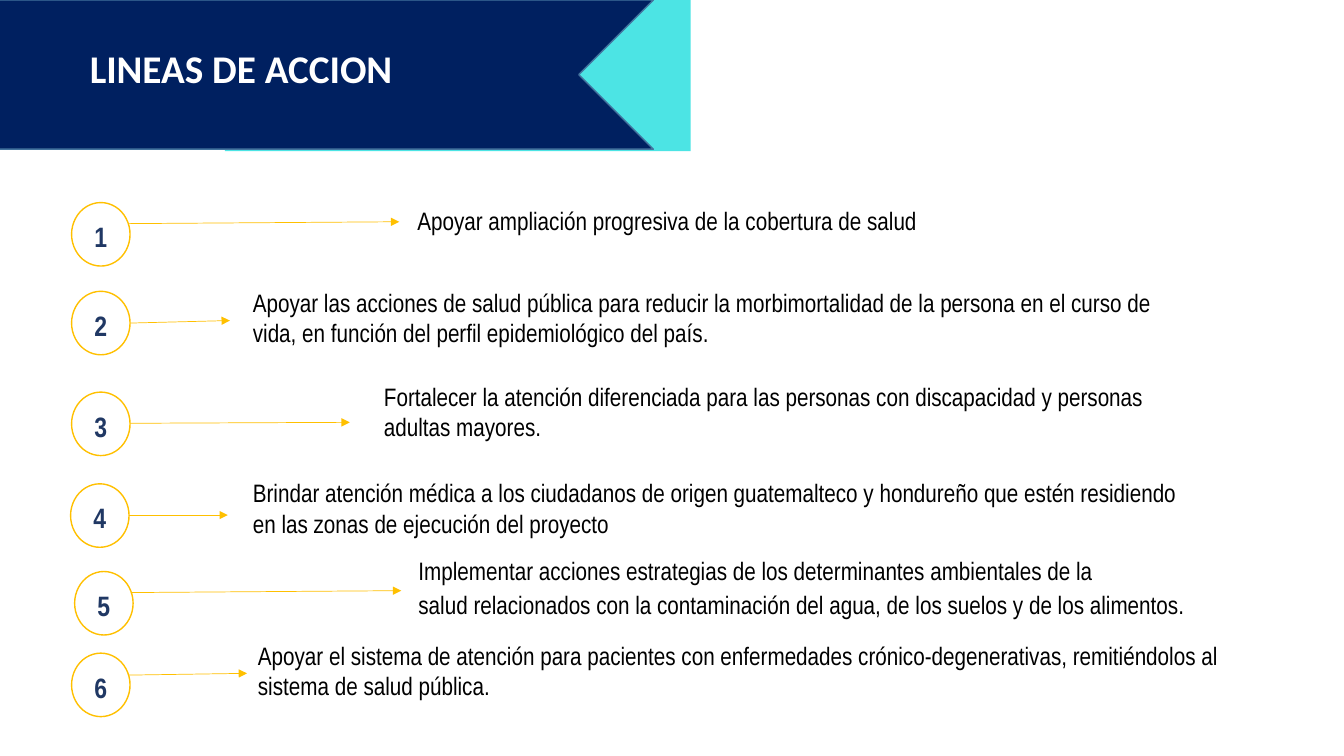
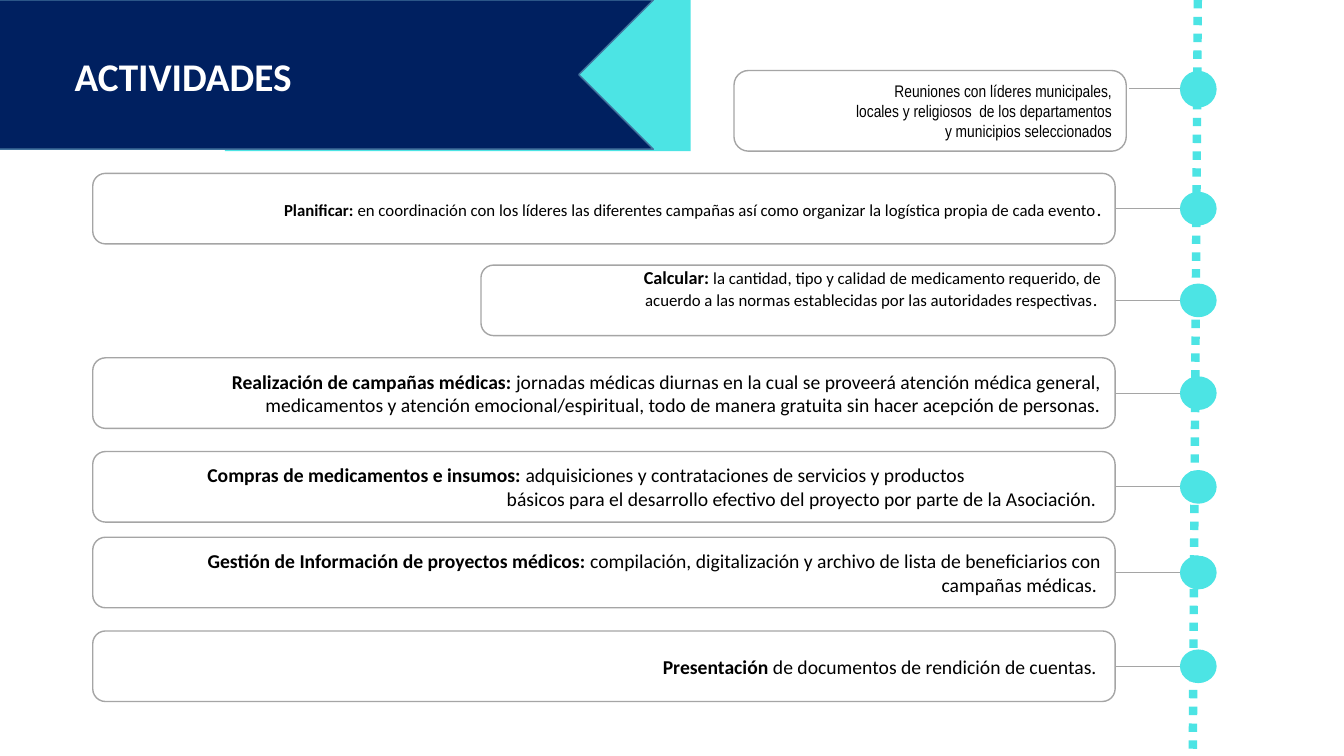
from lxml import etree
from pptx import Presentation
from pptx.dml.color import RGBColor
from pptx.enum.dml import MSO_LINE
from pptx.enum.shapes import MSO_CONNECTOR, MSO_SHAPE
from pptx.enum.text import MSO_ANCHOR, MSO_AUTO_SIZE, PP_ALIGN
from pptx.oxml.ns import qn
from pptx.util import Inches, Pt

STRAIGHT = MSO_CONNECTOR.STRAIGHT
ELLIPSE, CHEVRON = MSO_SHAPE.OVAL, MSO_SHAPE.CHEVRON
RECTANGLE, ROUNDED = MSO_SHAPE.RECTANGLE, MSO_SHAPE.ROUNDED_RECTANGLE
LEFT, CENTER, RIGHT = PP_ALIGN.LEFT, PP_ALIGN.CENTER, PP_ALIGN.RIGHT
MIDDLE, TOP = MSO_ANCHOR.MIDDLE, MSO_ANCHOR.TOP
DOTTED, NO_FIT = MSO_LINE.ROUND_DOT, MSO_AUTO_SIZE.NONE

NAVY, NAVY_EDGE, TURQUOISE = "002060", "43739E", "4CE4E4"
GOLD, GRAY, NUMBER_BLUE = "FFC000", "A5A5A5", "203864"
WHITE, BLACK = "FFFFFF", "000000"
NARROW, CALIBRI = "Arial Narrow", "Calibri"

prs = Presentation()
prs.slide_width, prs.slide_height = Inches(13.33), Inches(7.5)
ROWS = 750
CELL = prs.slide_height // ROWS  # square grid of 1333 columns by 750 rows


def paint(fill, color):
    """Make the fill of a shape, a line or a font solid."""
    fill.solid()
    fill.fore_color.rgb = RGBColor.from_string(color)


def write(paragraph, text, font=NARROW, size=18, color=BLACK, bold=False, align=LEFT):
    """Add one formatted run to the paragraph."""
    paragraph.alignment = align
    run = paragraph.add_run()
    run.text = text
    run.font.name, run.font.size, run.font.bold = font, Pt(size), bold
    paint(run.font.fill, color)


# Shared header: turquoise block, navy band and title
headers = [
    (1, "LINEAS DE ACCION", 79, 39),
    (5, "ACTIVIDADES", 64, 47),
]
for layout, heading, left, top in headers:
    slide = prs.slides.add_slide(prs.slide_layouts[layout])
    block = slide.shapes.add_shape(RECTANGLE, 223 * CELL, 0, 462 * CELL, 150 * CELL)
    paint(block.fill, TURQUOISE)
    block.line.fill.background()
    band = slide.shapes.add_shape(CHEVRON, -134 * CELL, 0, 782 * CELL, 148 * CELL)
    band.rotation = 180
    paint(band.fill, NAVY)
    paint(band.line.fill, NAVY_EDGE)
    band.line.width = Pt(1)

    title = slide.shapes.title
    title.left, title.top, title.width, title.height = left * CELL, top * CELL, 450 * CELL, 57 * CELL
    title.text_frame.auto_size = NO_FIT
    title.text_frame.vertical_anchor = MIDDLE
    write(title.text_frame.paragraphs[0], heading, CALIBRI, 28, WHITE, bold=True)
    slide.shapes.element.append(title.element)  # bring in front of the band

lines_slide, activities_slide = prs.slides

# Lines of action: circle left and top, arrow start row, tip column and row, text left, top, width
action_lines = [
    (71, 201, 222, 396, 220, 404, 199, 758, ["Apoyar ampliación progresiva de la cobertura de salud"]),
    (71, 289, 321, 228, 318, 241, 280, 937, [
        "Apoyar las acciones de salud pública para reducir la morbimortalidad de la persona "
        "en el curso de vida, en función del perfil epidemiológico del país."]),
    (71, 389, 420, 347, 419, 371, 373, 823, [
        "Fortalecer la atención diferenciada para las personas con discapacidad y personas "
        "adultas mayores."]),
    (70, 480, 511, 226, 511, 241, 469, 964, [
        "Brindar atención médica a los ciudadanos de origen guatemalteco y hondureño que estén "
        "residiendo en las zonas de ejecución del proyecto"]),
    (74, 567, 588, 398, 586, 405, 549, 900, [
        "Implementar acciones estrategias de los determinantes ambientales de la",
        "salud relacionados con la contaminación del agua, de los suelos y de los alimentos."]),
    (71, 648, 670, 245, 668, 246, 630, 1008, [
        "Apoyar el sistema de atención para pacientes con enfermedades crónico-degenerativas, "
        "remitiéndolos al sistema de salud pública."]),
]
shapes = lines_slide.shapes
for number, (circle_left, circle_top, start_row, tip, tip_row,
             left, top, width, sentences) in enumerate(action_lines, 1):
    arrow = shapes.add_connector(STRAIGHT, 110 * CELL, start_row * CELL, tip * CELL, tip_row * CELL)
    paint(arrow.line.fill, GOLD)
    arrow.line.width = Pt(0.5)
    etree.SubElement(arrow.line._get_or_add_ln(), qn("a:tailEnd"), type="triangle")

    circle = shapes.add_shape(ELLIPSE, circle_left * CELL, circle_top * CELL, 58 * CELL, 63 * CELL)
    paint(circle.fill, WHITE)
    paint(circle.line.fill, GOLD)
    circle.line.width = Pt(1)
    digit = circle.text_frame
    digit.margin_left = digit.margin_right = digit.margin_bottom = 0
    digit.margin_top = 4 * CELL
    write(digit.paragraphs[0], str(number), size=20, color=NUMBER_BLUE, bold=True, align=CENTER)

    if len(sentences) > 1:
        statement = lines_slide.placeholders[1]
        statement.left, statement.top, statement.width, statement.height = (
            left * CELL, top * CELL, width * CELL, 73 * CELL)
    else:
        statement = shapes.add_textbox(left * CELL, top * CELL, width * CELL, 71 * CELL)
    frame = statement.text_frame
    frame.word_wrap, frame.auto_size, frame.vertical_anchor = True, NO_FIT, TOP
    for position, sentence in enumerate(sentences):
        paragraph = frame.add_paragraph() if position else frame.paragraphs[0]
        write(paragraph, sentence)
        if statement.is_placeholder:
            paragraph.line_spacing, paragraph.space_before = 0.9, Pt(5)
            properties = paragraph._p.get_or_add_pPr()
            properties.set("marL", "0")
            properties.set("indent", "0")
            etree.SubElement(properties, qn("a:buNone"))

# Activities: box left, top, right, height, dot row, dot height, then paragraphs of (text, size, bold)
activities = [
    (728, 70, 1117, 80, 88, 35, [[
        ("Reuniones con líderes municipales, locales y religiosos  de los departamentos "
         "y municipios seleccionados", 12, False)]]),
    (92, 172, 1106, 70, 207, 32, [[
        ("Planificar: ", 12, True),
        ("en coordinación con los líderes las diferentes campañas así como organizar la "
         "logística propia de cada evento", 12, False),
        (".", 14, False)]]),
    (477, 263, 1106, 70, 298, 32, [[
        ("Calcular: ", 13, True),
        ("la cantidad, tipo y calidad de medicamento requerido, de acuerdo a las normas "
         "establecidas por las autoridades respectivas", 12, False),
        (". ", 13, False)]]),
    (92, 355, 1106, 70, 390, 32, [[
        ("Realización de campañas médicas:", 14, True),
        (" jornadas médicas diurnas en la cual se proveerá atención médica general, "
         "medicamentos y atención emocional/espiritual, todo de manera gratuita sin hacer "
         "acepción de personas.", 14, False)]]),
    (92, 448, 1106, 70, 483, 32, [
        [("Compras de medicamentos e insumos: ", 14, True),
         ("adquisiciones y contrataciones de servicios y productos", 14, False)],
        [("básicos para el desarrollo efectivo del proyecto por parte de la Asociación. ", 14, False)]]),
    (92, 533, 1106, 70, 568, 32, [[
        ("Gestión de Información de proyectos médicos: ", 14, True),
        ("compilación, digitalización y archivo de lista de beneficiarios con campañas "
         "médicas. ", 14, False)]]),
    (92, 626, 1106, 70, 661, 32, [[
        ("Presentación ", 14, True),
        ("de documentos de rendición de cuentas. ", 14, False)]]),
]
shapes = activities_slide.shapes
timeline = shapes.add_connector(STRAIGHT, 1188 * CELL, 0, 1183 * CELL, ROWS * CELL)
paint(timeline.line.fill, TURQUOISE)
timeline.line.width, timeline.line.dash_style = Pt(6), DOTTED

for left, top, right, height, dot_row, dot_height, paragraphs in activities:
    box = shapes.add_shape(ROUNDED, left * CELL, top * CELL, (right - left) * CELL, height * CELL)
    box.adjustments[0] = 0.18
    paint(box.fill, WHITE)
    paint(box.line.fill, GRAY)
    box.line.width = Pt(1)

    frame = box.text_frame
    frame.word_wrap, frame.margin_left = True, 110 * CELL
    if top == 263:
        frame.margin_bottom = 29 * CELL  # this text sits high in its box
    for position, runs in enumerate(paragraphs, 1):
        paragraph = frame.add_paragraph() if position > 1 else frame.paragraphs[0]
        for text, size, bold in runs:
            write(paragraph, text, NARROW if top == 70 else CALIBRI, size, bold=bold,
                  align=RIGHT if position == len(paragraphs) else LEFT)

    branch = shapes.add_connector(STRAIGHT, 1120 * CELL, dot_row * CELL, 1171 * CELL, dot_row * CELL)
    if dot_row == top + height // 2:
        branch.begin_connect(box, 3)
    paint(branch.line.fill, GRAY)
    branch.line.width = Pt(0.5)

    dot = shapes.add_shape(ELLIPSE, 1171 * CELL, (dot_row - dot_height // 2) * CELL,
                           35 * CELL, dot_height * CELL)
    paint(dot.fill, TURQUOISE)
    paint(dot.line.fill, TURQUOISE)
    dot.line.width = Pt(1)

# No shape keeps the theme's shadow
for slide in prs.slides:
    for shape in slide.shapes:
        if not shape.is_placeholder:
            etree.SubElement(shape.element.spPr, qn("a:effectLst"))

prs.save("out.pptx")
